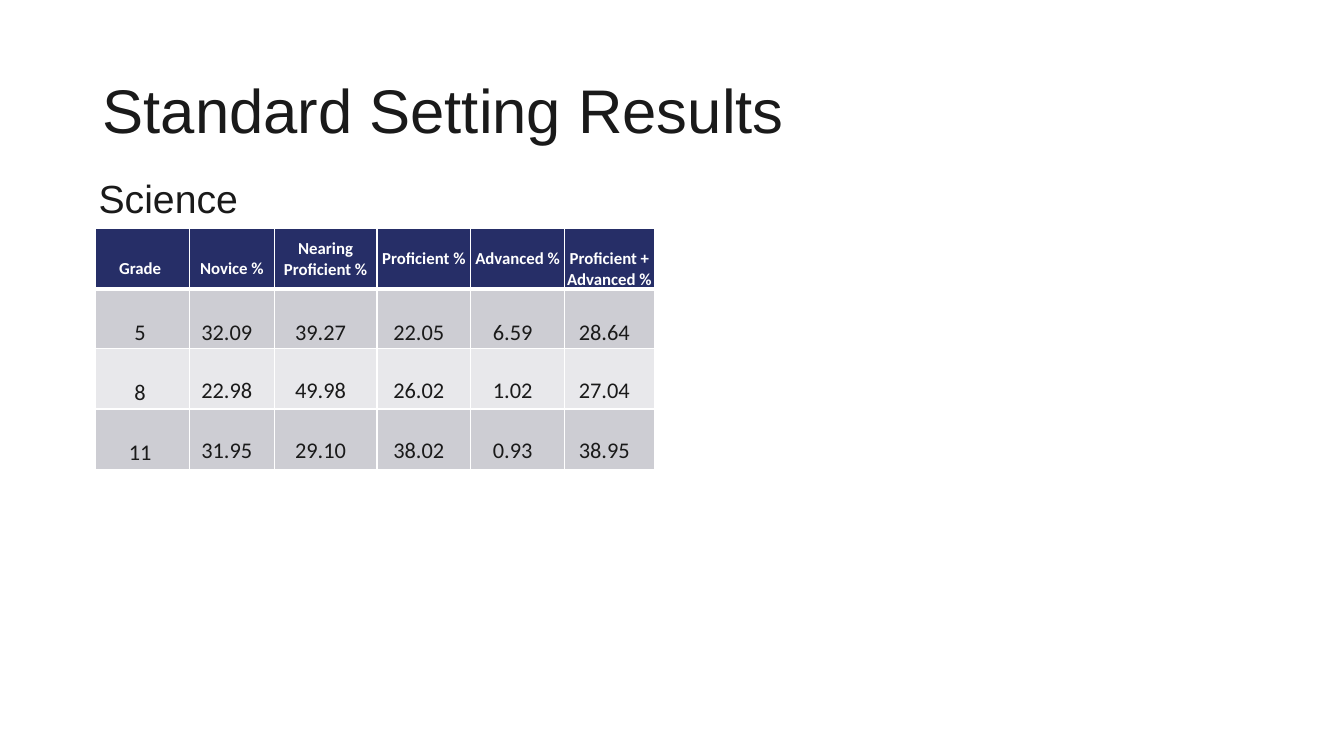
from lxml import etree
from pptx import Presentation
from pptx import util as u
from pptx.dml.color import RGBColor
from pptx.enum import text
from pptx.oxml.ns import qn

TITLE = "Standard Setting Results"
SUBJECT = "Science"
HEADINGS = ["Grade", "Novice %", "Nearing Proficient %", "Proficient %",
            "Advanced %", "Proficient + Advanced %"]
RESULTS = [
    ["5", "32.09", "39.27", "22.05", "6.59", "28.64"],
    ["8", "22.98", "49.98", "26.02", "1.02", "27.04"],
    ["11", "31.95", "29.10", "38.02", "0.93", "38.95"],
]
LOWERED_HEADINGS = {"Grade", "Novice %", "Proficient + Advanced %"}
COLUMN_WIDTHS = [0.93, 0.84, 1.02, 0.93, 0.93, 0.89]
ROW_HEIGHTS = [0.6, 0.59, 0.59, 0.59]

THEME = {
    "ink": "1A1A1A", "white": "FFFFFF", "header": "262E67",
    "bands": ["CDCDD3", "E8E8EB"],
    "display": "Arial", "table": "Calibri",
    "title": 44, "subject": 28, "heading": 12, "value": 16,
}


def style(paragraph, face, size, color, bold=False):
    paragraph.font.name = face
    paragraph.font.size = u.Pt(size)
    paragraph.font.bold = bold
    paragraph.font.color.rgb = RGBColor.from_string(color)


def add_text(slide, words, box, size, anchor):
    frame = slide.shapes.add_textbox(*map(u.Inches, box)).text_frame
    frame.word_wrap = True
    frame.vertical_anchor = anchor
    paragraph = frame.paragraphs[0]
    paragraph.text = words
    paragraph.line_spacing = 0.9
    style(paragraph, THEME["display"], size, THEME["ink"])


def set_borders(cell, bottom):
    properties = cell._tc.get_or_add_tcPr()
    for position, (side, points) in enumerate(
            [("lnL", 1), ("lnR", 1), ("lnT", 1), ("lnB", bottom)]):
        line = etree.Element(qn("a:" + side), w=str(u.Pt(points)))
        fill = etree.SubElement(line, qn("a:solidFill"))
        etree.SubElement(fill, qn("a:srgbClr"), val=THEME["white"])
        properties.insert(position, line)


def fill_cell(cell, words, insets, fill, size, color, bold, bottom):
    cell.margin_left, cell.margin_top, cell.margin_right, cell.margin_bottom = (
        map(u.Inches, insets))
    cell.vertical_anchor = text.MSO_ANCHOR.MIDDLE
    cell.fill.solid()
    cell.fill.fore_color.rgb = RGBColor.from_string(fill)
    paragraph = cell.text_frame.paragraphs[0]
    paragraph.text = words
    paragraph.alignment = text.PP_ALIGN.CENTER
    style(paragraph, THEME["table"], size, color, bold)
    set_borders(cell, bottom)


def add_results(slide):
    table = slide.shapes.add_table(
        len(ROW_HEIGHTS), len(COLUMN_WIDTHS), u.Inches(0.95), u.Inches(2.27),
        u.Inches(sum(COLUMN_WIDTHS)), u.Inches(sum(ROW_HEIGHTS))).table
    for column, width in zip(table.columns, COLUMN_WIDTHS):
        column.width = u.Inches(width)
    for row, height in zip(table.rows, ROW_HEIGHTS):
        row.height = u.Inches(height)

    for c, heading in enumerate(HEADINGS):
        top = 0.2 if heading in LOWERED_HEADINGS else 0
        right = 0.05 if c == 0 else 0
        fill_cell(table.cell(0, c), heading, (0, top, right, 0),
                  THEME["header"], THEME["heading"], THEME["white"], True, 3)

    for r, result in enumerate(RESULTS):
        for c, value in enumerate(result):
            if c == 0:
                insets = (0, 0.27, 0.05, 0)
            else:
                insets = (0.01, 0.28, 0.11, 0.05 if r else 0)
            fill_cell(table.cell(r + 1, c), value, insets,
                      THEME["bands"][r % 2], THEME["value"], THEME["ink"],
                      False, 1)


def main():
    deck = Presentation()
    deck.slide_width, deck.slide_height = u.Inches(13.33), u.Inches(7.5)
    slide = deck.slides.add_slide(deck.slide_layouts[6])
    add_text(slide, TITLE, (0.92, 0.4, 11.5, 1.45), THEME["title"],
             text.MSO_ANCHOR.MIDDLE)
    add_text(slide, SUBJECT, (0.88, 1.73, 11.5, 4.95), THEME["subject"],
             text.MSO_ANCHOR.TOP)
    add_results(slide)
    deck.save("out.pptx")


if __name__ == "__main__":
    main()
